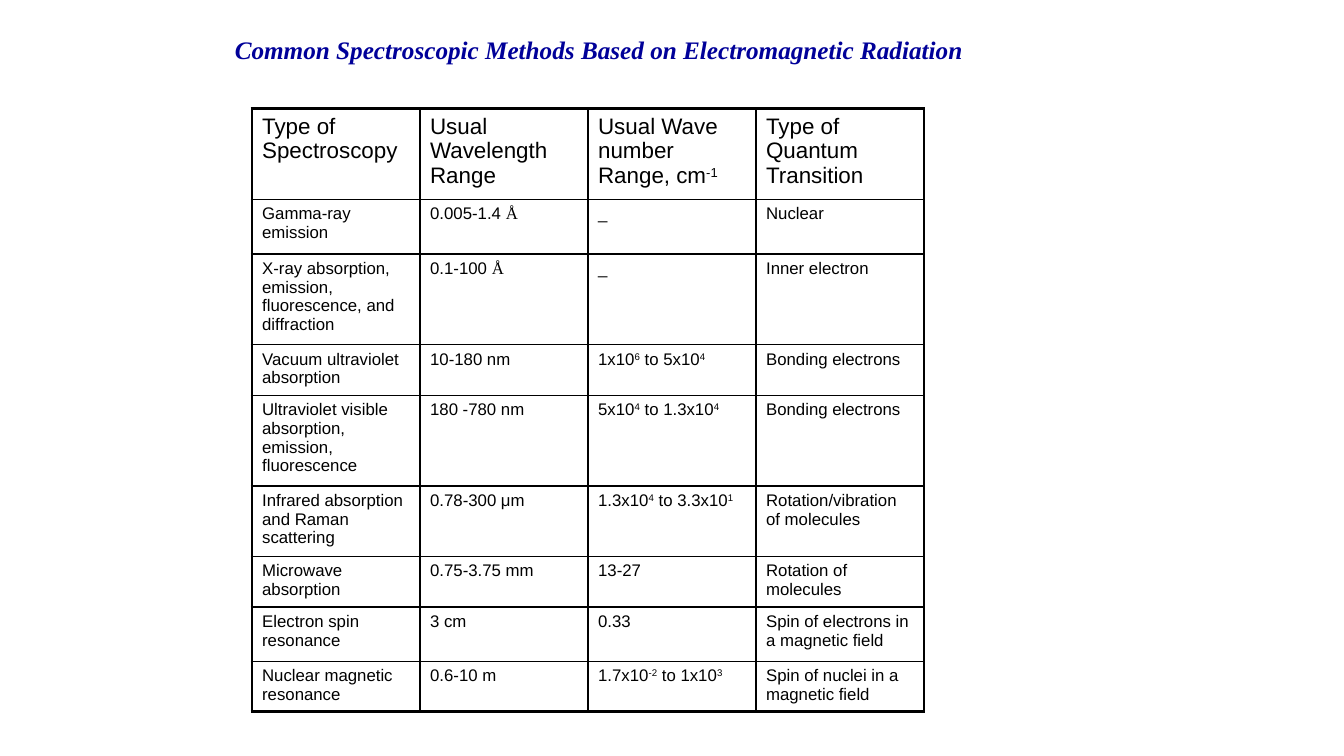
from lxml import etree
from pptx import Presentation
from pptx import util as u
from pptx.dml.color import RGBColor
from pptx.enum import text
from pptx.oxml.ns import qn


def style(font, size, name, color):
    font.size, font.name = u.Pt(size), name
    font.color.rgb = RGBColor.from_string(color)


def border(cell, side, width):
    ln = etree.SubElement(cell._tc.get_or_add_tcPr(), qn(f"a:ln{side}"), w=str(u.Pt(width)))
    fill = etree.SubElement(ln, qn("a:solidFill"))
    etree.SubElement(fill, qn("a:srgbClr"), val="000000")


prs = Presentation()
prs.slide_width, prs.slide_height = u.Inches(13.33), u.Inches(7.5)
s = prs.slides.add_slide(prs.slide_layouts[6])

tb = s.shapes.add_textbox(u.Inches(2.23), u.Inches(0.29), u.Inches(7.42), u.Inches(0.4))
tf = tb.text_frame
tf.word_wrap = False
tf.auto_size = text.MSO_AUTO_SIZE.SHAPE_TO_FIT_TEXT
p = tf.paragraphs[0]
p.text = "Common Spectroscopic Methods Based on Electromagnetic Radiation"
style(p.font, 18, "Times New Roman", "000099")
p.font.bold = p.font.italic = True

rows = [
    (0.9, "Type of Spectroscopy", "Usual Wavelength Range",
     "Usual Wave number Range, cm^-1", "Type of Quantum Transition"),
    (0.54, "Gamma-ray emission", "0.005-1.4 ^Å", "_", "Nuclear"),
    (0.9, "X-ray absorption, emission, fluorescence, and diffraction",
     "0.1-100 ^Å", "_", "Inner electron"),
    (0.5, "Vacuum ultraviolet absorption", "10-180 nm", "1x10^6^ to 5x10^4", "Bonding electrons"),
    (0.9, "Ultraviolet visible absorption, emission, fluorescence",
     "180 -780 nm", "5x10^4^ to 1.3x10^4", "Bonding electrons"),
    (0.7, "Infrared absorption and Raman scattering", "0.78-300 μm",
     "1.3x10^4^ to 3.3x10^1", "Rotation/vibration of molecules"),
    (0.5, "Microwave absorption", "0.75-3.75 mm", "13-27", "Rotation of molecules"),
    (0.54, "Electron spin resonance", "3 cm", "0.33", "Spin of electrons in a magnetic field"),
    (0.5, "Nuclear magnetic resonance", "0.6-10 m",
     "1.7x10^-2^ to 1x10^3", "Spin of nuclei in a magnetic field"),
]
n_rows, n_cols = len(rows), 4
col_w = prs.slide_width // 8
height = u.Inches(sum(row[0] for row in rows))
table = s.shapes.add_table(n_rows, n_cols, u.Inches(2.5), u.Inches(1.08),
                           n_cols * col_w, height).table
table.first_row = table.horz_banding = False

for i, (row_h, *values) in enumerate(rows):
    table.rows[i].height = u.Inches(row_h)
    for j, value in enumerate(values):
        cell = table.cell(i, j)
        edges = {"L": j == 0, "R": j == n_cols - 1, "T": i == 0, "B": i == n_rows - 1}
        for side, outer in edges.items():
            border(cell, side, 2.25 if outer else 1)
        cell.fill.background()
        p = cell.text_frame.paragraphs[0]
        style(p.font, 12 if i else 16, "Arial", "000000")
        for k, piece in enumerate(value.split("^")):
            r = p.add_run()
            r.text = piece
            if piece == "Å":
                r.font.name = "Times New Roman"
            elif k % 2:
                r._r.get_or_add_rPr().set("baseline", "30000")

prs.save("out.pptx")
